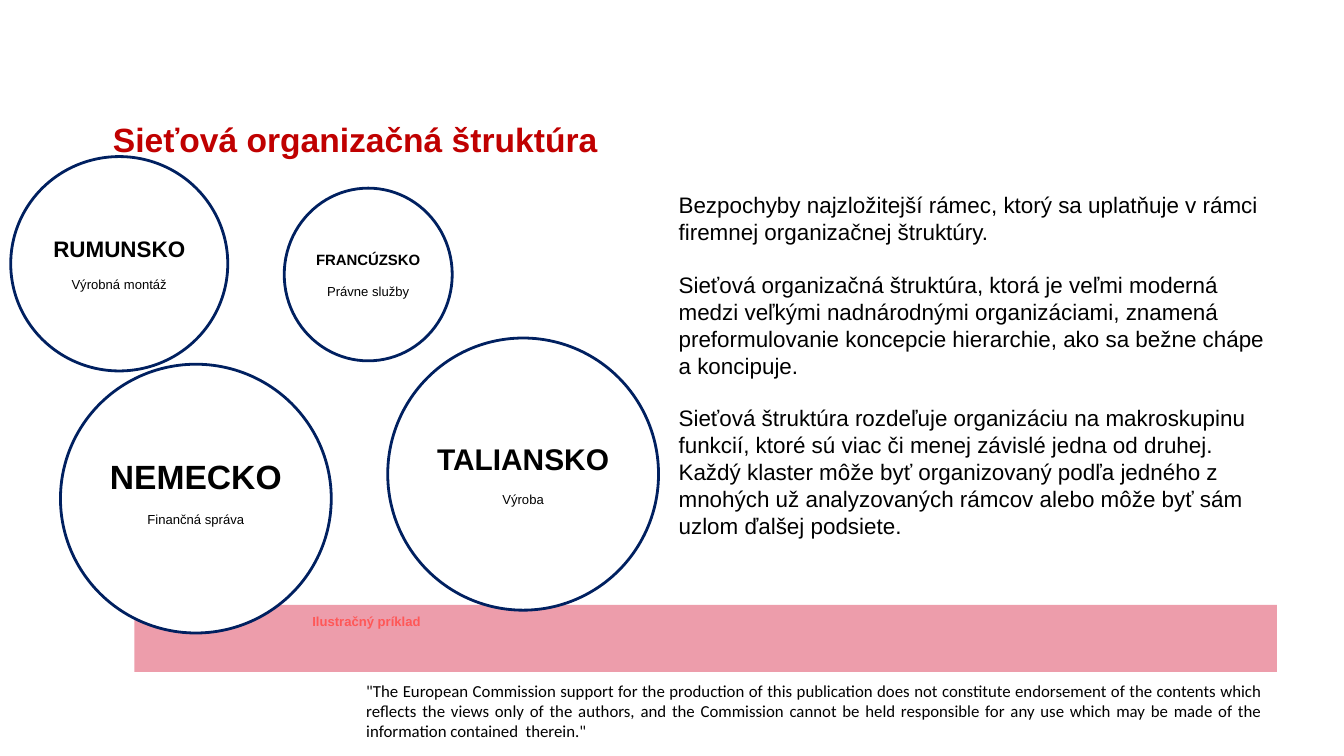
from pptx import Presentation
from pptx.dml.color import RGBColor
from pptx.enum import shapes, text
from pptx.util import Inches, Pt

COLORS = {"title": "C00000", "text": "000000", "circle": "FFFFFF",
          "outline": "002060", "band": "ED9DAB", "caption": "FF5757"}

TITLE = "Sieťová organizačná štruktúra"
BODY = [
    "Bezpochyby najzložitejší rámec, ktorý sa uplatňuje v rámci firemnej organizačnej štruktúry.",
    "Sieťová organizačná štruktúra, ktorá je veľmi moderná medzi veľkými nadnárodnými "
    "organizáciami, znamená preformulovanie koncepcie hierarchie, ako sa bežne chápe a koncipuje.",
    "Sieťová štruktúra rozdeľuje organizáciu na makroskupinu funkcií, ktoré sú viac či menej "
    "závislé jedna od druhej. Každý klaster môže byť organizovaný podľa jedného z mnohých už "
    "analyzovaných rámcov alebo môže byť sám uzlom ďalšej podsiete.",
]
CAPTION = "Ilustračný príklad"
DISCLAIMER = (
    "\"The European Commission support for the production of this publication does not "
    "constitute endorsement of the contents which reflects the views only of the authors, "
    "and the Commission cannot be held responsible for any use which may be made of the "
    "information contained  therein.\"")

# Country, role, country size, (left, top, width, height), bottom inset
CIRCLES = [
    ("NEMECKO", "Finančná správa", 36, (0.9, 5.42, 4.03, 4), 0.27),
    ("FRANCÚZSKO", "Právne služby", 16, (4.23, 2.8, 2.5, 2.57), 0.05),
    ("TALIANSKO", "Výroba", 32, (5.77, 5.03, 4.03, 4.05), 0.05),
    ("RUMUNSKO", "Výrobná montáž", 24, (0.16, 2.33, 3.23, 3.19), 0.05),
]
# Outline of the band, clockwise from the top left
BAND = [(1.58, 9.46), (1.62, 9.46), (1.62, 9.45), (15.43, 9.45), (15.43, 9.46),
        (18.88, 9.46), (18.88, 9.88), (13.62, 9.88), (13.62, 9.87), (6.94, 9.87),
        (6.94, 9.88), (1.62, 9.88), (1.62, 9.87), (1.58, 9.87)]


def rgb(name):
    return RGBColor.from_string(COLORS[name])


def style(p, size, color="text", bold=False, font="Arial", align=text.PP_ALIGN.LEFT):
    p.alignment = align
    p.font.name, p.font.size, p.font.bold = font, Pt(size), bold
    p.font.color.rgb = rgb(color)


def fill_text(tf, lines, gap=0):
    """Write one paragraph per (text, style options) and space them by gap points."""
    tf.word_wrap = True
    for i, (line, options) in enumerate(lines):
        p = tf.add_paragraph() if i else tf.paragraphs[0]
        p.text = line
        if i:
            p.space_before = Pt(gap)
        style(p, **options)


def add_text(s, box, lines, gap=0):
    tf = s.shapes.add_textbox(*map(Inches, box)).text_frame
    fill_text(tf, lines, gap)
    return tf


prs = Presentation()
prs.slide_width, prs.slide_height = Inches(20), Inches(11.25)
s = prs.slides.add_slide(prs.slide_layouts[5])
center = text.PP_ALIGN.CENTER

# Title
title = s.shapes.title
title.left, title.top, title.width, title.height = map(Inches, (1.58, 1.72, 13.77, 0.71))
title.text_frame.auto_size = text.MSO_AUTO_SIZE.NONE
title.text_frame.vertical_anchor = text.MSO_ANCHOR.TOP
fill_text(title.text_frame, [(TITLE, dict(size=36, color="title", bold=True))])

# Band
builder = s.shapes.build_freeform(*BAND[0], scale=Inches(1))
builder.add_line_segments(BAND[1:], close=True)
band = builder.convert_to_shape()
band.shadow.inherit = False
band.fill.solid()
band.fill.fore_color.rgb = rgb("band")
band.line.fill.background()

# Disclaimer
tf = add_text(s, (5.45, 10.15, 13.33, 0.76),
              [(DISCLAIMER, dict(size=18, font="Calibri", align=text.PP_ALIGN.JUSTIFY))])
tf.margin_left = tf.margin_right = tf.margin_top = tf.margin_bottom = 0
tf.paragraphs[0].line_spacing = 0.98

# Body text
add_text(s, (10, 2.8, 8.92, 5.35), [(line, dict(size=24)) for line in BODY], gap=27.6)

# Country circles
for country, role, size, box, bottom in CIRCLES:
    sp = s.shapes.add_shape(shapes.MSO_SHAPE.OVAL, *map(Inches, box))
    sp.shadow.inherit = False
    sp.fill.solid()
    sp.fill.fore_color.rgb = rgb("circle")
    sp.line.color.rgb = rgb("outline")
    sp.line.width = Pt(3)
    tf = sp.text_frame
    tf.vertical_anchor = text.MSO_ANCHOR.MIDDLE
    tf.margin_bottom = Inches(bottom)
    fill_text(tf, [(country, dict(size=size, bold=True, align=center)),
                   (role, dict(size=14, align=center))], gap=16)

# Caption
add_text(s, (4.23, 9.08, 2.45, 0.34),
         [(CAPTION, dict(size=14, color="caption", bold=True, align=center))])

prs.save("out.pptx")
